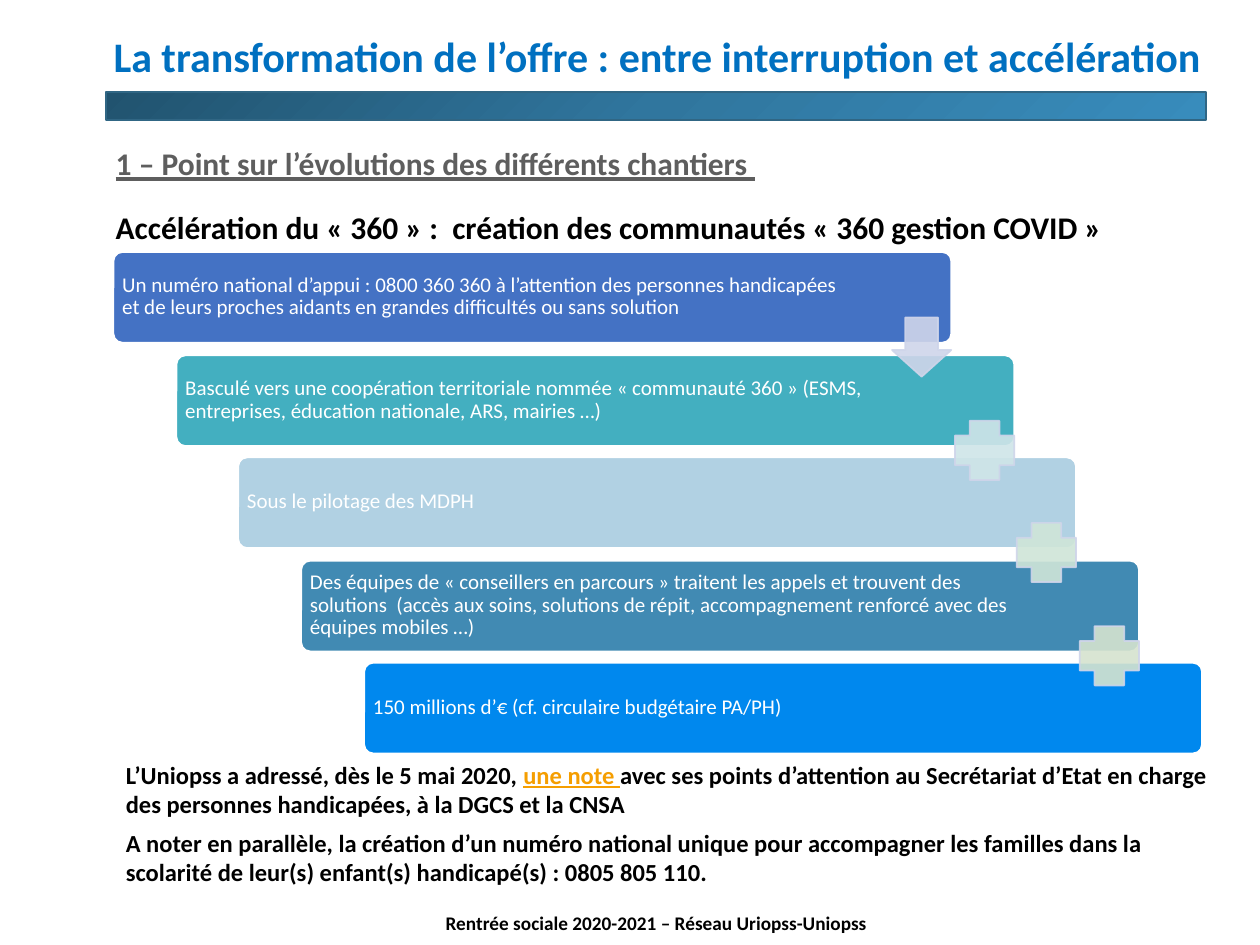
from copy import deepcopy
from dataclasses import dataclass

from lxml import etree
from pptx import Presentation
from pptx.dml.color import RGBColor
from pptx.enum.shapes import MSO_SHAPE
from pptx.enum.text import MSO_ANCHOR, PP_ALIGN
from pptx.oxml.ns import qn
from pptx.util import Pt

RECT = MSO_SHAPE.RECTANGLE
ROUNDED = MSO_SHAPE.ROUNDED_RECTANGLE
DOWN_ARROW = MSO_SHAPE.DOWN_ARROW
PLUS = MSO_SHAPE.CROSS
TOP, MIDDLE, BOTTOM = MSO_ANCHOR.TOP, MSO_ANCHOR.MIDDLE, MSO_ANCHOR.BOTTOM
LEFT, CENTER, RIGHT = PP_ALIGN.LEFT, PP_ALIGN.CENTER, PP_ALIGN.RIGHT

EMU_PER_PX = 9144
STEP_X, STEP_Y = 49.7, 81.6


@dataclass(frozen=True)
class Theme:
    font: str = "Calibri"
    title: str = "0070C0"
    subtitle: str = "5E5E5E"
    ink: str = "000000"
    white: str = "FFFFFF"
    link: str = "F59E00"
    band: tuple = ((0, "21536F"), (0.5, "30769E"), (1, "388CBC"))
    band_line: str = "306684"
    badge_line: str = "CFD5EA"
    badge_alpha: int = 90
    title_size: int = 24
    heading_size: int = 18
    note_size: int = 14
    step_size: int = 12
    footer_size: int = 11


THEME = Theme()

STEPS = [
    ("4472C4", 579, "Un numéro national d’appui : 0800 360 360 à l’attention des personnes "
     "handicapées et de leurs proches aidants en grandes difficultés ou sans solution"),
    ("43AFC0", 565, "Basculé vers une coopération territoriale nommée « communauté 360 » "
     "(ESMS, entreprises, éducation nationale, ARS, mairies …)"),
    ("B1D1E3", 565, "Sous le pilotage des MDPH"),
    ("418AB3", 565, "Des équipes de « conseillers en parcours » traitent les appels et trouvent "
     "des solutions  (accès aux soins, solutions de répit, accompagnement renforcé avec des "
     "équipes mobiles …)"),
    ("0088EE", 565, "150 millions d’€ (cf. circulaire budgétaire PA/PH)"),
]
BADGES = [
    (DOWN_ARROW, "CFD5EA", (0.55, 0.45)),
    (PLUS, "CFE5E8", (0.25,)),
    (PLUS, "CFE5D8", (0.25,)),
    (PLUS, "D5E3CF", (0.25,)),
]


def px(n):
    return round(n) * EMU_PER_PX


def rgb(color):
    return RGBColor.from_string(color)


def add_text(slide, box, text, size, color=THEME.ink, bold=True, underline=False,
             align=LEFT, anchor=TOP, spacing=None, inset=None):
    tf = slide.shapes.add_textbox(*map(px, box)).text_frame
    tf.word_wrap = True
    tf.vertical_anchor = anchor
    if inset is not None:
        tf.margin_left = tf.margin_right = tf.margin_top = tf.margin_bottom = px(inset)
    p = tf.paragraphs[0]
    p.alignment = align
    if spacing:
        p.line_spacing = spacing
    runs = [(text, color, underline)] if isinstance(text, str) else text
    for content, run_color, run_underline in runs:
        r = p.add_run()
        r.text = content
        r.font.name = THEME.font
        r.font.size = Pt(size)
        r.font.bold = bold
        r.font.underline = run_underline
        r.font.color.rgb = rgb(run_color)


def set_alpha(fill_parent, percent):
    for clr in fill_parent.findall(f"{qn('a:solidFill')}/{qn('a:srgbClr')}"):
        etree.SubElement(clr, qn("a:alpha"), val=str(percent * 1000))


def add_shape(slide, kind, box, line, fill=None, adjustments=(), alpha=None):
    sp = slide.shapes.add_shape(kind, *map(px, box))
    sp.shadow.inherit = False
    for i, value in enumerate(adjustments):
        sp.adjustments[i] = value
    if fill:
        sp.fill.solid()
        sp.fill.fore_color.rgb = rgb(fill)
    sp.line.color.rgb = rgb(line)
    sp.line.width = Pt(1)
    if alpha:
        sp_pr = sp._element.spPr
        set_alpha(sp_pr, alpha)
        set_alpha(sp_pr.find(qn("a:ln")), alpha)
    return sp


def add_band(slide):
    sp = add_shape(slide, RECT, (84, 73, 873, 22), THEME.band_line)
    sp.fill.gradient()
    sp.fill.gradient_angle = 315
    gs_list = sp._element.spPr.find(f"{qn('a:gradFill')}/{qn('a:gsLst')}")
    gs_list.append(deepcopy(gs_list[-1]))
    for stop, (position, color) in zip(sp.fill.gradient_stops, THEME.band):
        stop.position = position
        stop.color.rgb = rgb(color)


def add_staircase(slide):
    for i, (color, text_width, text) in enumerate(STEPS):
        x, y = 90 + i * STEP_X, 200 + i * STEP_Y
        add_shape(slide, ROUNDED, (x, y, 665, 72), THEME.white, color, (0.1,))
        add_text(slide, (x + 2, y + 2, text_width, 67), text, THEME.step_size,
                 color=THEME.white, bold=False, anchor=MIDDLE, spacing=0.9, inset=5)
    for i, (kind, color, adjustments) in enumerate(BADGES):
        add_shape(slide, kind, (708 + i * STEP_X, 252 + i * STEP_Y, 47, 47),
                  THEME.badge_line, color, adjustments, THEME.badge_alpha)


def main():
    prs = Presentation()
    prs.slide_width, prs.slide_height = px(1000), px(750)
    s = prs.slides.add_slide(prs.slide_layouts[6])

    add_text(s, (277, 718, 488, 29), "Rentrée sociale 2020-2021 – Réseau Uriopss-Uniopss",
             THEME.footer_size, align=CENTER)
    add_band(s)
    add_text(s, (82, 113, 871, 33), "1 – Point sur l’évolutions des différents chantiers ",
             THEME.heading_size, color=THEME.subtitle, underline=True, spacing=0.9)
    add_text(s, (58, 13, 905, 57),
             "La transformation de l’offre : entre interruption et accélération",
             THEME.title_size, color=THEME.title, align=RIGHT, anchor=BOTTOM, spacing=0.9)
    add_text(s, (82, 160, 854, 40),
             "Accélération du « 360 » :  création des communautés « 360 gestion COVID »",
             THEME.heading_size)
    add_staircase(s)
    add_text(s, (90, 598, 880, 57), [
        ("L’Uniopss a adressé, dès le 5 mai 2020, ", THEME.ink, False),
        ("une note ", THEME.link, True),
        ("avec ses points d’attention au Secrétariat d’Etat en charge des personnes "
         "handicapées, à la DGCS et la CNSA", THEME.ink, False),
    ], THEME.note_size)
    add_text(s, (90, 652, 864, 57),
             "A noter en parallèle, la création d’un numéro national unique pour accompagner "
             "les familles dans la scolarité de leur(s) enfant(s) handicapé(s) : 0805 805 110.",
             THEME.note_size)

    prs.save("out.pptx")


if __name__ == "__main__":
    main()
